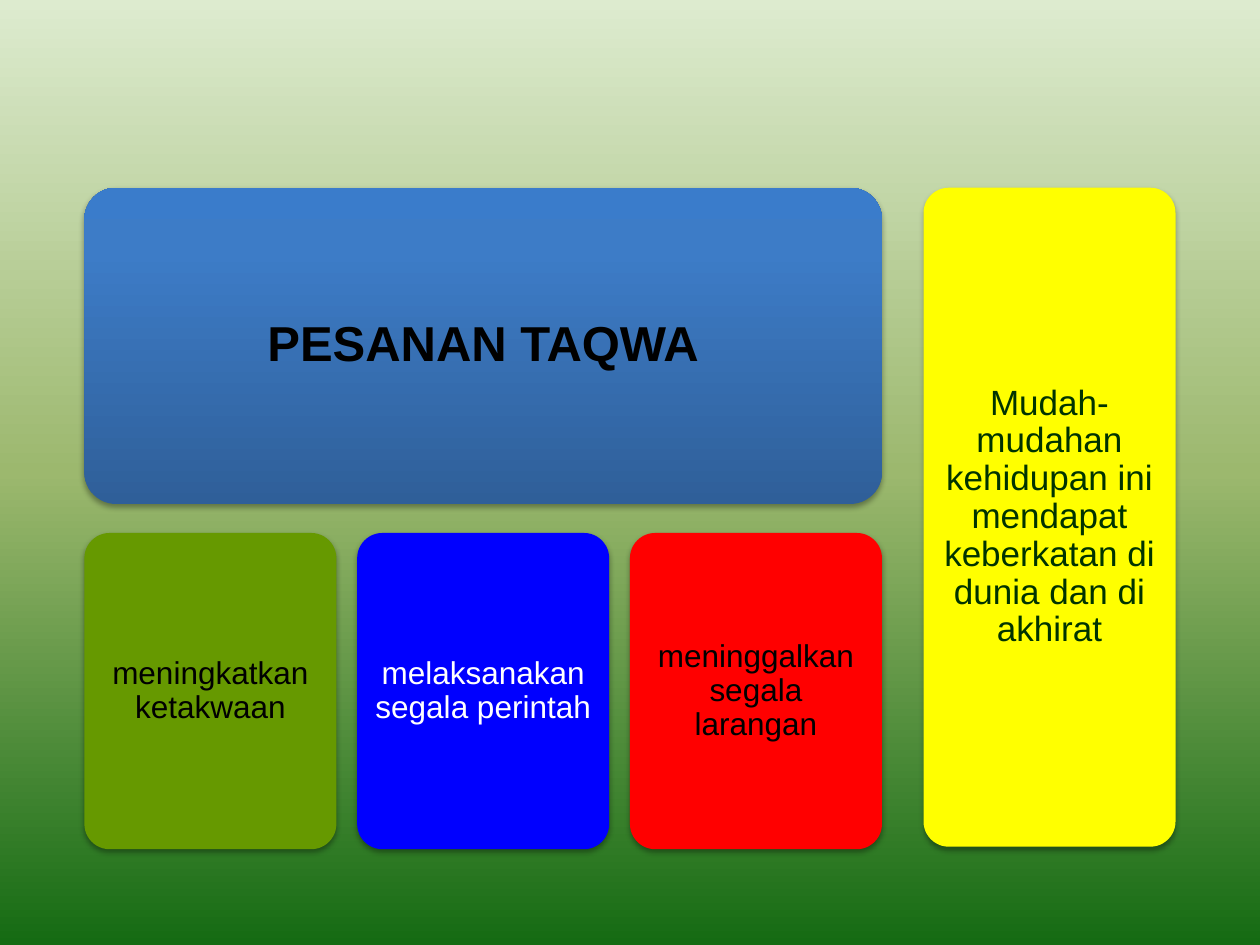
from lxml import etree
from pptx import Presentation
from pptx.dml.color import RGBColor
from pptx.enum.shapes import MSO_SHAPE
from pptx.enum.text import MSO_ANCHOR, PP_ALIGN
from pptx.oxml import parse_xml
from pptx.oxml.ns import nsdecls, qn
from pptx.util import Inches, Pt

COLORS = {
    "black": "000000", "white": "FFFFFF", "dark_green": "003300",
    "olive": "669900", "blue": "0000FF", "red": "FF0000", "yellow": "FFFF00",
}
BACKGROUND = [(0, "DDEBCF"), (50, "9CB86E"), (100, "156B13")]
HEADER = [(0, "2F5F99"), (80, "3D7CC7"), (100, "3A7CCB")]
SHADOW = (
    f'<a:effectLst {nsdecls("a")}>'
    f'<a:outerShdw blurRad="{Pt(3.1)}" dist="{Pt(1.8)}" dir="5400000" rotWithShape="0">'
    f'<a:srgbClr val="{COLORS["black"]}"><a:alpha val="35000"/></a:srgbClr>'
    '</a:outerShdw></a:effectLst>'
)


def set_gradient(fill, element, stops, angle):
    """Fill with any number of stops; angle runs counter-clockwise."""
    fill.gradient()
    fill.gradient_angle = angle
    stop_list = element.find(".//" + qn("a:gsLst"))
    for old in list(stop_list):
        stop_list.remove(old)
    for position, color in stops:
        gs = etree.SubElement(stop_list, qn("a:gs"), pos=str(position * 1000))
        etree.SubElement(gs, qn("a:srgbClr"), val=color)


def add_card(text, left, top, width, height, fill=None, stops=None,
             size=18, color="black", bold=False, inset=0.07):
    sp = s.shapes.add_shape(MSO_SHAPE.ROUNDED_RECTANGLE, Inches(left), Inches(top),
                            Inches(width), Inches(height))
    sp.adjustments[0] = 0.1
    if stops:
        set_gradient(sp.fill, sp.element, stops, 90)
    else:
        sp.fill.solid()
        sp.fill.fore_color.rgb = RGBColor.from_string(COLORS[fill])
    sp.line.fill.background()
    sp.element.spPr.append(parse_xml(SHADOW))

    tf = sp.text_frame
    tf.word_wrap = True
    tf.vertical_anchor = MSO_ANCHOR.MIDDLE
    tf.margin_left = tf.margin_right = tf.margin_top = tf.margin_bottom = Inches(inset)
    p = tf.paragraphs[0]
    p.alignment = PP_ALIGN.CENTER
    p.line_spacing = 0.9
    r = p.add_run()
    r.text = text
    r.font.name = "Arial"
    r.font.size = Pt(size)
    r.font.bold = bold
    r.font.color.rgb = RGBColor.from_string(COLORS[color])


prs = Presentation()
prs.slide_width, prs.slide_height = Inches(10), Inches(7.5)
s = prs.slides.add_slide(prs.slide_layouts[6])

# Background
set_gradient(s.background.fill, s.element, BACKGROUND, 270)

# Header card
left, top, row_height, card_width = 0.67, 1.49, 2.51, 2
add_card("PESANAN TAQWA", left, top, 6.33, row_height, stops=HEADER,
         size=28, bold=True, inset=0.12)

# Three message cards below the header
messages = [
    ("meningkatkan ketakwaan", "olive", "black"),
    ("melaksanakan segala perintah", "blue", "white"),
    ("meninggalkan segala larangan", "red", "black"),
]
for i, (text, fill, color) in enumerate(messages):
    add_card(text, left + i * 2.165, 4.23, card_width, row_height,
             fill=fill, color=color)

# Tall hope card on the right
add_card("Mudah-mudahan kehidupan ini mendapat keberkatan di dunia dan di akhirat",
         7.33, top, card_width, 5.23, fill="yellow", size=20,
         color="dark_green", inset=0.08)

prs.save("out.pptx")
